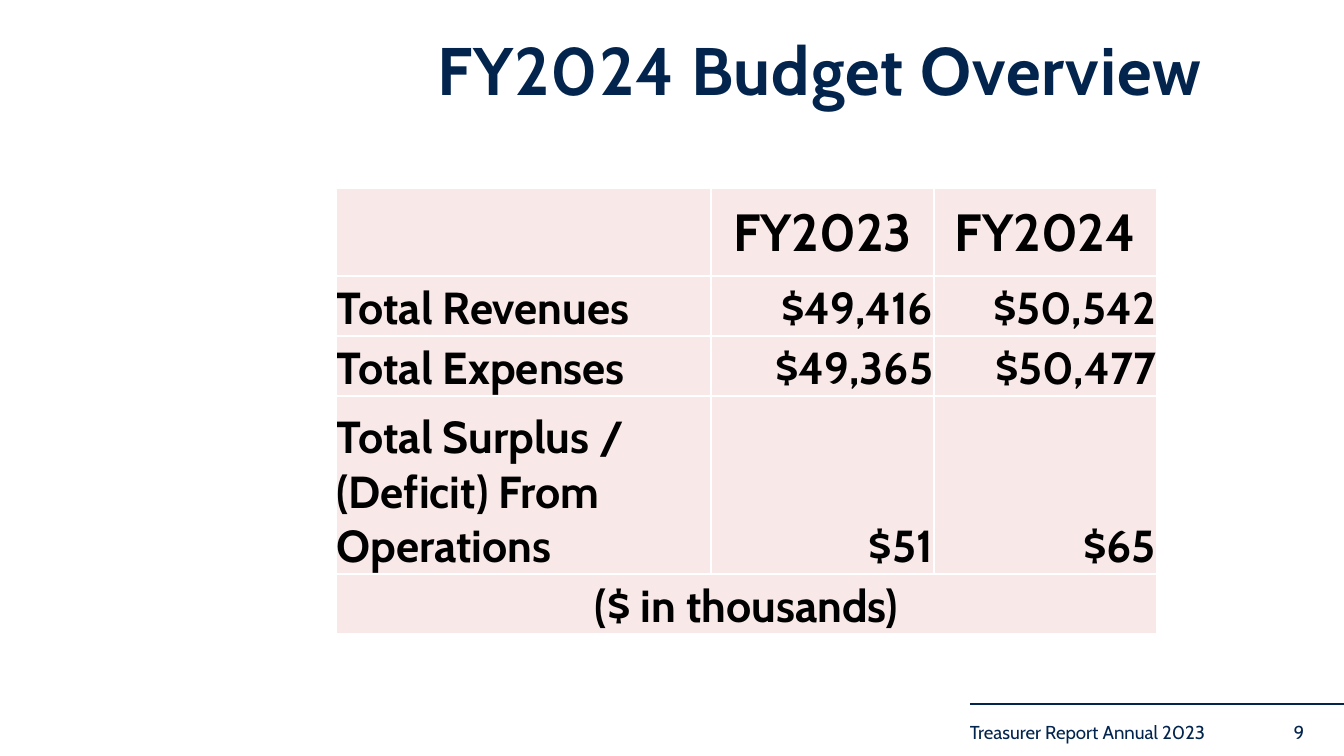
import pptx
import pptx.dml.color
import pptx.enum.shapes
import pptx.enum.text
import pptx.oxml
import pptx.oxml.ns
import pptx.util

PX = 914400 / 134.4
FONT = "Cabin"
NAVY, BLACK, WHITE, PINK = "03254D", "000000", "FFFFFF", "F8E8E8"
ALIGN = pptx.enum.text.PP_ALIGN
ANCHOR = pptx.enum.text.MSO_ANCHOR
COLS = [375, 223, 223]
ROWS = [88, 60, 60, 178, 60]
BUDGET = [
    ["", "FY2023", "FY2024"],
    ["Total Revenues", "$49,416", "$50,542"],
    ["Total Expenses", "$49,365", "$50,477"],
    ["Total Surplus / (Deficit) From Operations", "$51", "$65"],
    ["($ in thousands)", "", ""],
]


def px(n):
    return pptx.util.Emu(round(n * PX))


def rgb(value):
    return pptx.dml.color.RGBColor.from_string(value)


def add_run(p, text, size, color, bold=False):
    r = p.add_run()
    r.text = text
    r.font.name = FONT
    r.font.size = pptx.util.Pt(size)
    r.font.bold = bold
    r.font.color.rgb = rgb(color)
    return r


def set_margins(obj, left, top, right, bottom):
    obj.margin_left, obj.margin_top = px(left), px(top)
    obj.margin_right, obj.margin_bottom = px(right), px(bottom)


def set_title(s, text):
    sp = s.shapes.title
    sp.left, sp.top, sp.width, sp.height = px(437), px(34), px(840), px(79)
    tf = sp.text_frame
    tf.auto_size = pptx.enum.text.MSO_AUTO_SIZE.NONE
    tf.vertical_anchor = ANCHOR.MIDDLE
    set_margins(tf, 0, 0, 0, 0)
    p = tf.paragraphs[0]
    p.alignment = ALIGN.LEFT
    p.line_spacing = 0.9
    r = add_run(p, text, 36, NAVY, True)
    r.font._element.set("spc", "50")


def add_footer_text(s, text, left, width, align):
    tf = s.shapes.add_textbox(px(left), px(707), px(width), px(50)).text_frame
    tf.word_wrap = True
    tf.vertical_anchor = ANCHOR.MIDDLE
    set_margins(tf, 0, 0, 0, 0)
    p = tf.paragraphs[0]
    p.alignment = align
    add_run(p, text, 10, NAVY)


def add_rule(s, x1, x2, y):
    line = s.shapes.add_connector(
        pptx.enum.shapes.MSO_CONNECTOR.STRAIGHT, px(x1), px(y), px(x2), px(y))
    line.line.color.rgb = rgb(NAVY)
    line.line.width = pptx.util.Pt(1)
    line._element.spPr.append(pptx.oxml.parse_xml(
        f"<a:effectLst {pptx.oxml.ns.nsdecls('a')}/>"))


def set_borders(cell):
    tcPr = cell._tc.get_or_add_tcPr()
    for side in ("lnL", "lnR", "lnT", "lnB"):
        tcPr.append(pptx.oxml.parse_xml(
            f"<a:{side} {pptx.oxml.ns.nsdecls('a')} w='12700'><a:solidFill>"
            f"<a:srgbClr val='{WHITE}'/></a:solidFill></a:{side}>"))


def format_cell(cell, text, size, align, anchor):
    set_borders(cell)
    cell.fill.solid()
    cell.fill.fore_color.rgb = rgb(PINK)
    cell.vertical_anchor = anchor
    set_margins(cell, 1, 1, 1, 0)
    p = cell.text_frame.paragraphs[0]
    p.alignment = align
    if text:
        add_run(p, text, size, BLACK, True)


def add_budget_table(s):
    table = s.shapes.add_table(len(ROWS), len(COLS), px(336), px(188),
                               px(sum(COLS)), px(sum(ROWS))).table
    for col, width in zip(table.columns, COLS):
        col.width = px(width)
    for row, height in zip(table.rows, ROWS):
        row.height = px(height)
    last = len(ROWS) - 1
    for i, values in enumerate(BUDGET):
        for j, text in enumerate(values):
            if i in (0, last):
                align = ALIGN.CENTER
            else:
                align = ALIGN.RIGHT if j else ALIGN.LEFT
            size, anchor = (24, ANCHOR.BOTTOM) if i else (28, ANCHOR.MIDDLE)
            format_cell(table.cell(i, j), text, size, align, anchor)
    table.cell(last, 0).merge(table.cell(last, len(COLS) - 1))


def main():
    prs = pptx.Presentation()
    prs.slide_width, prs.slide_height = px(1344), px(756)
    s = prs.slides.add_slide(prs.slide_layouts[5])
    s.background.fill.solid()
    s.background.fill.fore_color.rgb = rgb(WHITE)
    add_rule(s, 970, 1344, 704)
    add_footer_text(s, "Treasurer Report Annual 2023", 970, 269, ALIGN.LEFT)
    set_title(s, "FY2024 Budget Overview")
    add_budget_table(s)
    add_footer_text(s, "9", 1254, 90, ALIGN.CENTER)
    prs.save("out.pptx")


if __name__ == "__main__":
    main()
